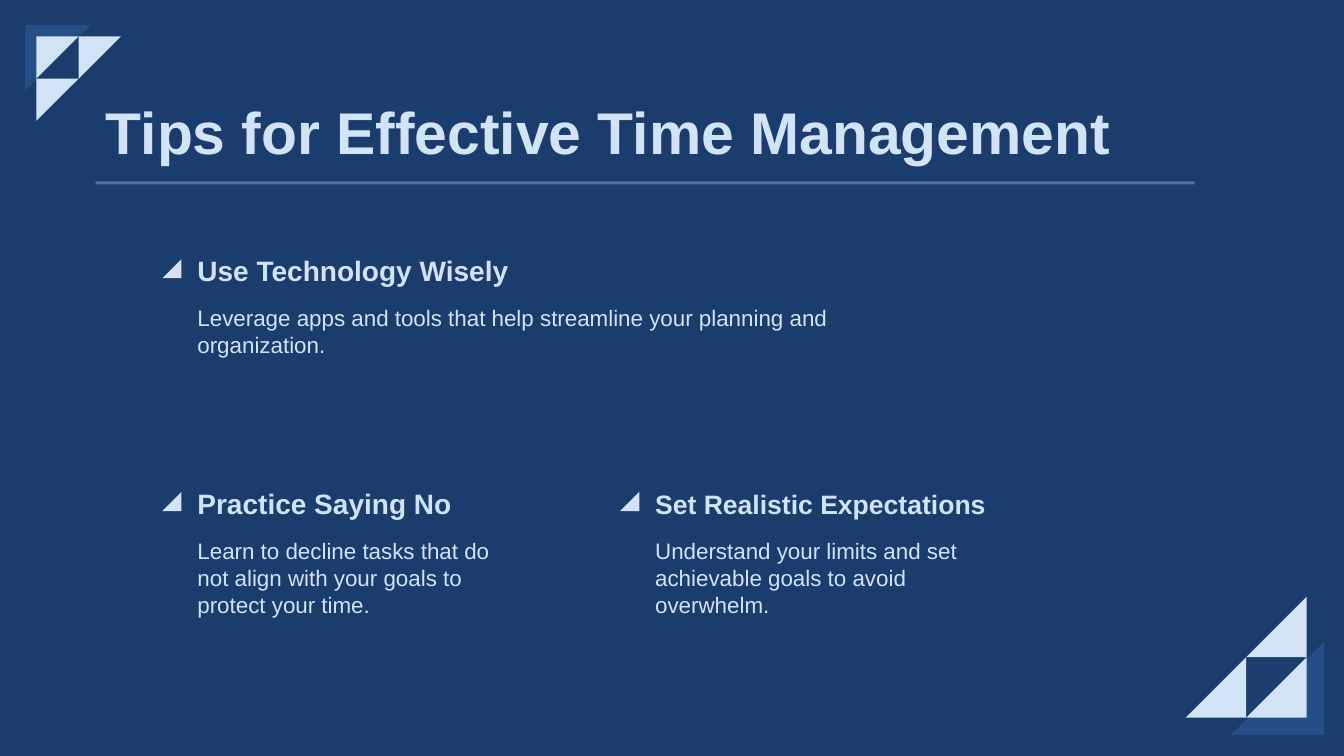
"""Build the slide of tips for effective time management."""
from lxml import etree
from pptx import Presentation
from pptx import util as u
from pptx.dml.color import RGBColor
from pptx.enum import shapes, text
from pptx.oxml.ns import qn

TITLE = "Tips for Effective Time Management"
TIPS = [
    {"col": 0, "row": 0, "size": 20, "wide": 6.56, "high": 1.01,
     "head": "Use Technology Wisely",
     "body": "Leverage apps and tools that help streamline your planning and organization."},
    {"col": 0, "row": 1, "size": 20, "wide": 3.27, "high": 1.31,
     "head": "Practice Saying No",
     "body": "Learn to decline tasks that do not align with your goals to protect your time."},
    {"col": 1, "row": 1, "size": 19, "wide": 3.27, "high": 1.31,
     "head": "Set Realistic Expectations",
     "body": "Understand your limits and set achievable goals to avoid overwhelm."},
]
EMBLEMS = [
    {"back": (13.13, 7.29, -0.92), "front": (12.96, 7.12, -0.6)},
    {"back": (0.25, 0.25, 0.65), "front": (0.36, 0.36, 0.42)},
]
HEX = {"ground": "1A3D6E", "light": "D1E3F5", "shade": "264E86"}
FONT = "Arial"
WIDE, HIGH = 13.33, 7.5
LEFT, SPAN = 0.95, 10.9
COL, COL_STEP = 1.86, 4.54
ROW, ROW_STEP = 2.43, 2.31
DROP = 0.54


def paint(shape, hue):
    """Give a shape a plain fill with no line or shadow."""
    shape.fill.solid()
    shape.fill.fore_color.rgb = RGBColor.from_string(HEX[hue])
    shape.line.fill.background()
    shape.shadow.inherit = False


def wedge(home, x, y, side, hue):
    """Draw a right triangle from its square corner; a negative side points up and left."""
    x, y, side = u.Inches(x), u.Inches(y), u.Inches(side)
    form = home.build_freeform(x, y)
    form.add_line_segments([(x + side, y), (x, y + side)])
    paint(form.convert_to_shape(), hue)


def write(box, words, size, bold, anchor, top, base):
    """Fill a text frame with one left-aligned run."""
    frame = box.text_frame
    frame.word_wrap = True
    frame.auto_size = text.MSO_AUTO_SIZE.NONE
    frame.vertical_anchor = anchor
    frame.margin_left = frame.margin_right = u.Inches(0.1)
    frame.margin_top, frame.margin_bottom = u.Inches(top), u.Inches(base)
    para = frame.paragraphs[0]
    para.alignment = text.PP_ALIGN.LEFT
    run = para.add_run()
    run.text = words
    run.font.name, run.font.size, run.font.bold = FONT, u.Pt(size), bold
    run.font.color.rgb = RGBColor.from_string(HEX["light"])


def main():
    """Lay out the slide and save it."""
    deck = Presentation()
    deck.slide_width, deck.slide_height = u.Inches(WIDE), u.Inches(HIGH)
    slide = deck.slides.add_slide(deck.slide_layouts[5])
    slide.background.fill.solid()
    slide.background.fill.fore_color.rgb = RGBColor.from_string(HEX["ground"])
    items = slide.shapes
    low, high = text.MSO_ANCHOR.BOTTOM, text.MSO_ANCHOR.TOP

    title = items.title
    title.left, title.top = u.Inches(LEFT), u.Inches(0.15)
    title.width, title.height = u.Inches(SPAN), u.Inches(1.55)
    write(title, TITLE, 42, True, low, 0, 0.05)

    rule = items.add_shape(shapes.MSO_SHAPE.RECTANGLE, u.Inches(LEFT), u.Inches(1.8),
                           u.Inches(SPAN), u.Inches(0.03))
    paint(rule, "light")
    tint = rule.fill._xPr.find(qn("a:solidFill"))[0]
    etree.SubElement(tint, qn("a:alpha")).set("val", "32000")

    for mark in EMBLEMS:
        group = items.add_group_shape().shapes
        wedge(group, *mark["back"], "shade")
        x, y, side = mark["front"]
        for across, down in [(0, 0), (1, 0), (0, 1)]:
            wedge(group, x + across * side, y + down * side, side, "light")

    for tip in TIPS:
        x, y = COL + tip["col"] * COL_STEP, ROW + tip["row"] * ROW_STEP
        wedge(items, x - 0.06, y + 0.33, -0.19, "light")
        head = items.add_textbox(u.Inches(x), u.Inches(y), u.Inches(4.04), u.Inches(0.42))
        write(head, tip["head"], tip["size"], True, low, 0.05, 0)
        body = items.add_textbox(u.Inches(x), u.Inches(y + DROP),
                                 u.Inches(tip["wide"]), u.Inches(tip["high"]))
        write(body, tip["body"], 16, False, high, 0.05, 0.05)

    deck.save("out.pptx")


if __name__ == "__main__":
    main()
